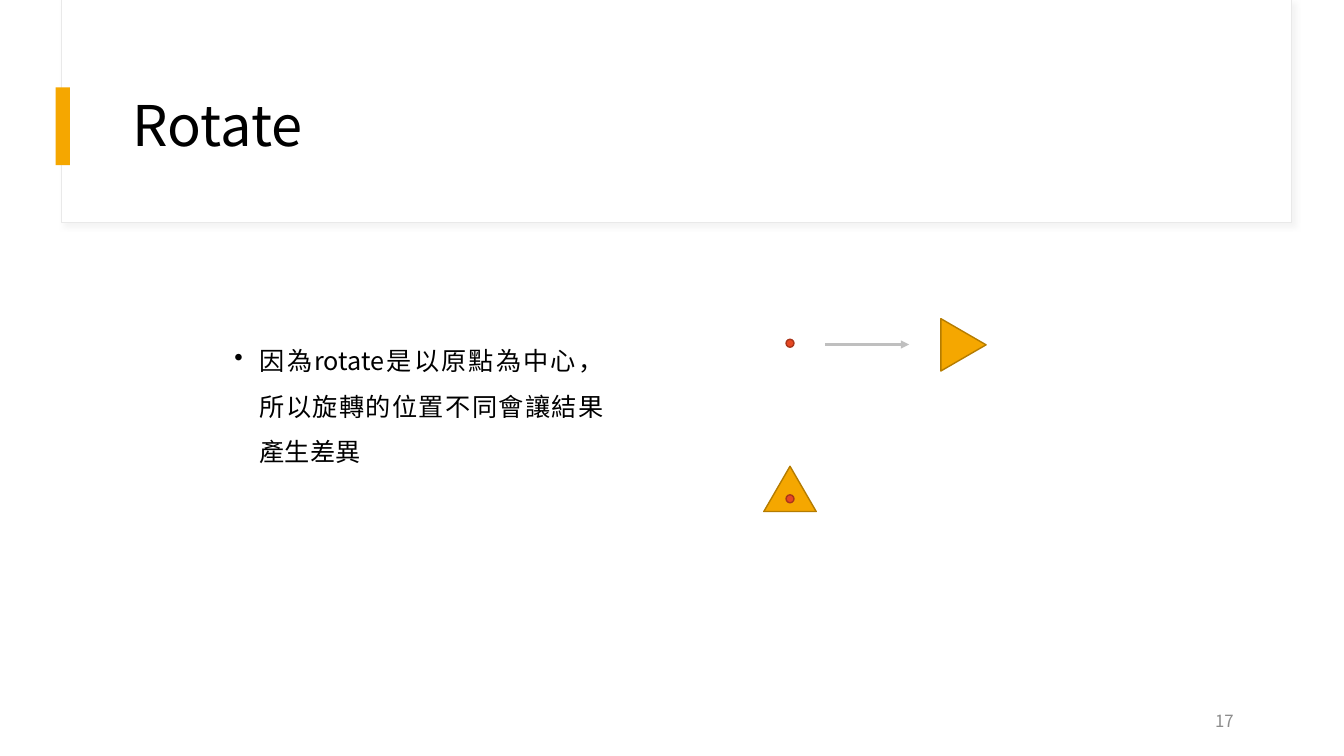
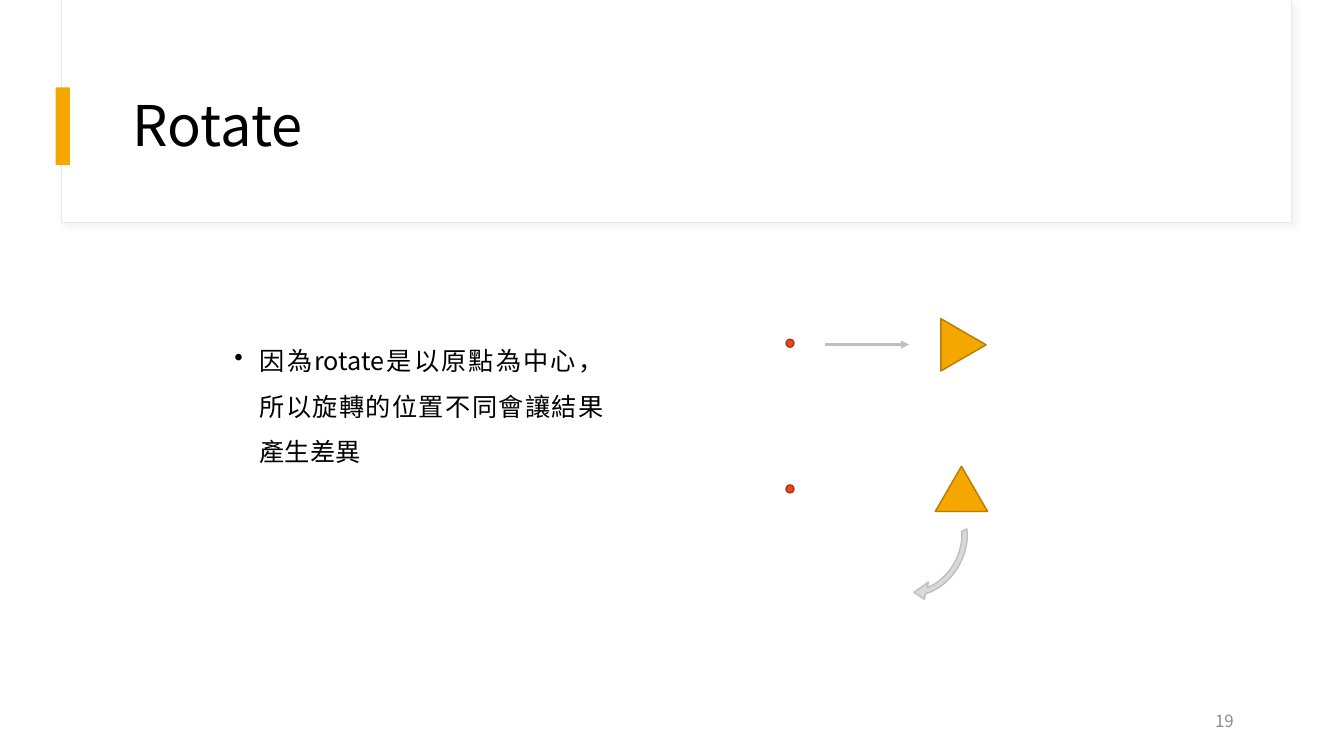
from lxml import etree
from pptx import Presentation
from pptx.dml.color import RGBColor
from pptx.enum import shapes, text
from pptx.oxml import ns
from pptx.util import Cm, Pt

FONT = "Noto Sans CJK TC"
WHITE = RGBColor(0xFF, 0xFF, 0xFF)
BLACK = RGBColor(0, 0, 0)
BAND_LINE = RGBColor(0xE9, 0xE9, 0xE9)
AMBER = RGBColor(0xF5, 0xA7, 0x00)
AMBER_LINE = RGBColor(0xB5, 0x7C, 0x00)
RED = RGBColor(0xE6, 0x48, 0x23)
RED_LINE = RGBColor(0xAA, 0x35, 0x1A)
SILVER = RGBColor(0xD9, 0xD9, 0xD9)
SILVER_LINE = RGBColor(0xBF, 0xBF, 0xBF)
NUMBER_GREY = RGBColor(0x8C, 0x8C, 0x8C)

SHAPE = shapes.MSO_SHAPE
ALIGN = text.PP_ALIGN
ROW_GAP = 3.67
DOT = 0.2
TRIANGLE = (1.32, 1.14)


def add_xml(parent, tag, **attributes):
    return etree.SubElement(parent, ns.qn(tag), attributes)


def add_figure(slide, kind, box, fill, line=None, width=1):
    """Add a flat preset shape; box is left, top, width, height in cm."""
    figure = slide.shapes.add_shape(kind, *map(Cm, box))
    figure.shadow.inherit = False
    figure.fill.solid()
    figure.fill.fore_color.rgb = fill
    if line is None:
        figure.line.fill.background()
    else:
        figure.line.color.rgb = line
        figure.line.width = Pt(width)
    return figure


def add_centred(slide, kind, centre, size, fill, line):
    (x, y), (width, height) = centre, size
    box = (x - width / 2, y - height / 2, width, height)
    return add_figure(slide, kind, box, fill, line)


def add_text(slide, box, wording, size, color, align, anchor):
    frame = slide.shapes.add_textbox(*map(Cm, box)).text_frame
    frame.word_wrap = True
    frame.vertical_anchor = anchor
    paragraph = frame.paragraphs[0]
    paragraph.text = wording
    paragraph.alignment = align
    font = paragraph.font
    font.name, font.size = FONT, Pt(size)
    font.color.rgb = color
    add_xml(paragraph._p.pPr.find(ns.qn("a:defRPr")), "a:ea", typeface=FONT)
    return paragraph


def add_title_band(slide, title, left=1.55, width=31.01, height=5.61):
    band = add_figure(slide, SHAPE.RECTANGLE, (left, 0, width, height),
                      WHITE, BAND_LINE, 0.75)
    effects = band._element.spPr.find(ns.qn("a:effectLst"))
    shadow = add_xml(effects, "a:outerShdw", blurRad=str(Pt(4)), dist=str(Pt(3)),
                     dir="2700000", algn="tl", rotWithShape="0")
    tint = add_xml(shadow, "a:srgbClr", val=str(SILVER))
    add_xml(tint, "a:alpha", val="30000")
    add_figure(slide, SHAPE.RECTANGLE, (left - 0.15, 2.2, 0.36, 1.96), AMBER)
    heading = add_text(slide, (left + 1.55, 1.6, 28.24, 3.28), title, 40, BLACK,
                       ALIGN.LEFT, text.MSO_ANCHOR.MIDDLE)
    heading.line_spacing = 0.9


def add_explanation(slide, box, wording):
    bullet = add_text(slide, box, wording, 18, BLACK, ALIGN.JUSTIFY,
                      text.MSO_ANCHOR.TOP)
    bullet.line_spacing = 1.5
    bullet.space_before = Pt(10)
    properties = bullet._p.pPr
    properties.set("marL", str(Pt(18)))
    properties.set("indent", str(-Pt(18)))
    mark = add_xml(properties, "a:buChar", char="•")
    properties.find(ns.qn("a:defRPr")).addprevious(mark)


def add_page_number(slide, number):
    add_text(slide, (23.72, 17.65, 7.62, 1.02), str(number), 12, NUMBER_GREY,
             ALIGN.RIGHT, text.MSO_ANCHOR.MIDDLE)


def add_origin(slide, x, y):
    add_centred(slide, SHAPE.OVAL, (x, y), (DOT, DOT), RED, RED_LINE)


def add_triangle(slide, x, y, rotation=0):
    triangle = add_centred(slide, SHAPE.ISOSCELES_TRIANGLE, (x, y), TRIANGLE,
                           AMBER, AMBER_LINE)
    triangle.rotation = rotation


def add_translation(slide, x, y):
    """Upper row: a turned triangle moved away from the origin at x, y."""
    add_origin(slide, x, y)
    arrow = slide.shapes.add_connector(
        shapes.MSO_CONNECTOR.STRAIGHT,
        Cm(x + 0.89), Cm(y + 0.03), Cm(x + 3), Cm(y + 0.03))
    arrow.line.color.rgb = SILVER_LINE
    arrow.line.width = Pt(1.5)
    add_xml(arrow.line._get_or_add_ln(), "a:tailEnd", type="triangle")
    add_xml(arrow._element.spPr, "a:effectLst")
    add_triangle(slide, x + 4.37, y + 0.04, 90)


def add_rotation_in_place(slide, x, y):
    add_triangle(slide, x, y)
    add_origin(slide, x, y + 0.25)


def add_rotation_around_origin(slide, x, y):
    add_origin(slide, x, y)
    add_triangle(slide, x + 4.32, y)
    turn = add_centred(slide, SHAPE.CIRCULAR_ARROW, (x + 3.41, y + 1.45),
                       (2.9, 2.26), SILVER, SILVER_LINE)
    turn.rotation = 118.8
    # thickness, head angle, end angle, start angle, head width
    for index, value in enumerate((0.06, 9.27, 197.95, 130.96, 0.1)):
        turn.adjustments[index] = value


def add_rotate_slide(deck, number, add_lower_row, x=19.91, y=8.65):
    """Build one slide; x, y is the origin of the diagram's upper row."""
    slide = deck.slides.add_slide(deck.slide_layouts[6])
    add_title_band(slide, "Rotate")
    add_explanation(slide, (5.66, 8.2, 9.8, 6.99),
                    "因為rotate是以原點為中心，所以旋轉的位置不同會讓結果產生差異")
    add_translation(slide, x, y)
    add_lower_row(slide, x, y + ROW_GAP)
    add_page_number(slide, number)


def main():
    deck = Presentation()
    deck.slide_width, deck.slide_height = Cm(33.87), Cm(19.05)
    add_rotate_slide(deck, 17, add_rotation_in_place)
    add_rotate_slide(deck, 19, add_rotation_around_origin)
    deck.save("out.pptx")


if __name__ == "__main__":
    main()
